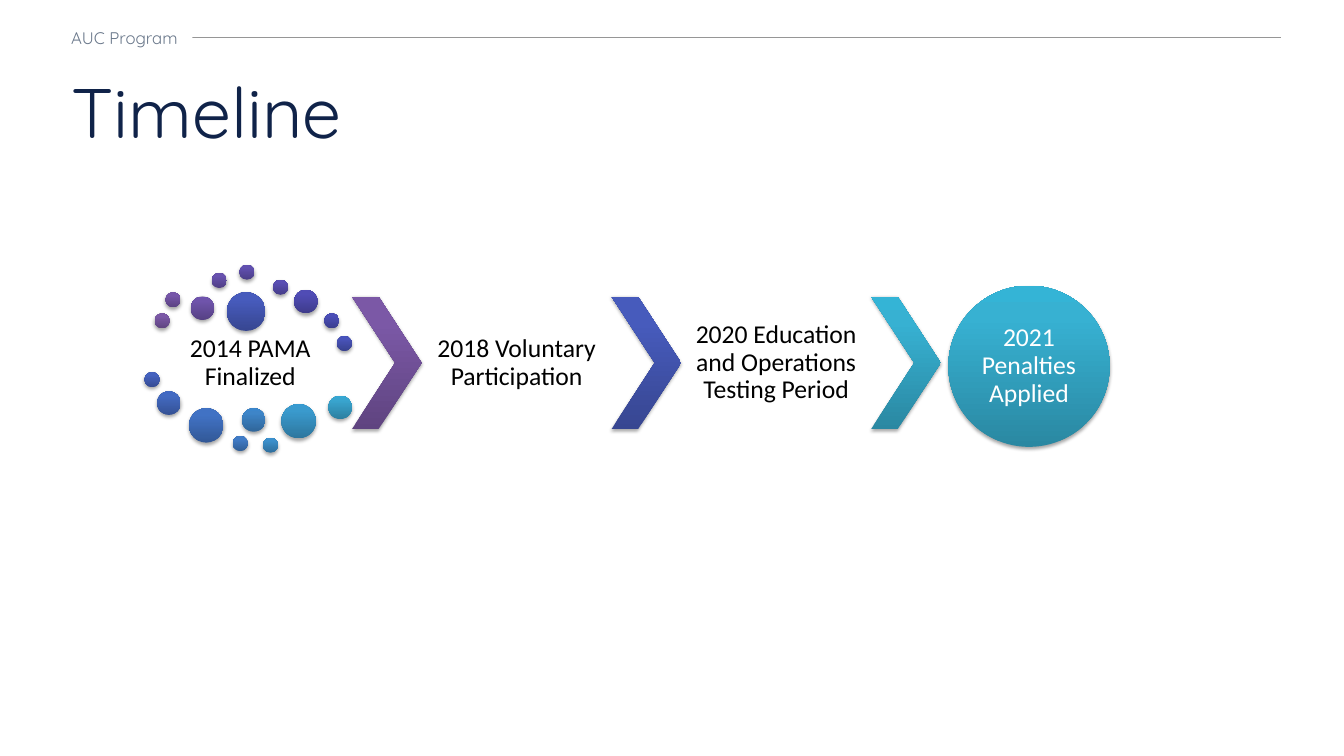
import copy

import pptx
import pptx.dml.color
import pptx.enum.shapes
import pptx.enum.text
import pptx.oxml
import pptx.oxml.ns
import pptx.util

Inches = pptx.util.Inches
Pt = pptx.util.Pt
Shapes = pptx.enum.shapes.MSO_SHAPE
Align = pptx.enum.text.PP_ALIGN
Anchor = pptx.enum.text.MSO_ANCHOR
NAMESPACE = 'xmlns:a="http://schemas.openxmlformats.org/drawingml/2006/main"'
SHADOW = (
    f'<a:outerShdw {NAMESPACE} blurRad="{Pt(3.1)}" dist="{Pt(1.8)}" dir="5400000" '
    'rotWithShape="0"><a:srgbClr val="000000"><a:alpha val="35000"/></a:srgbClr></a:outerShdw>'
)

PURPLE = ("5F4480", "7B58A6", "7C57A8")
BLUE = ("374691", "475BBC", "455ABF")
TEAL = ("2A88A2", "37B1D2", "34B4D6")
SMALL, MEDIUM, LARGE, LARGEST = 0.18, 0.28, 0.41, 0.46
DOTS = [
    (1.84, 3.73, SMALL, PURPLE),
    (1.97, 3.48, SMALL, ("5B4282", "7656A9", "7655AB")),
    (2.27, 3.53, MEDIUM, ("564184", "6F54AB", "6F53AE")),
    (2.52, 3.25, SMALL, ("503F86", "6852AE", "6851B0")),
    (2.85, 3.15, SMALL, ("4B3E88", "6150B0", "604FB3")),
    (3.25, 3.33, SMALL, ("453C89", "594EB3", "584DB5")),
    (3.5, 3.45, MEDIUM, ("3E3B8B", "504CB5", "4F4BB8")),
    (3.86, 3.73, SMALL, ("393C8D", "4B4EB7", "494CBA")),
    (4.01, 4, SMALL, ("38418F", "4954BA", "4753BD")),
    (2.7, 3.48, LARGEST, BLUE),
    (1.72, 4.43, SMALL, ("354B93", "4562BF", "4361C2")),
    (1.87, 4.66, MEDIUM, ("345195", "436AC1", "4169C4")),
    (2.25, 4.86, LARGE, ("325897", "4172C4", "3F72C7")),
    (2.77, 5.19, SMALL, ("315F98", "407BC6", "3D7CC9")),
    (2.88, 4.86, MEDIUM, ("30669A", "3E85C8", "3B86CC")),
    (3.13, 5.21, SMALL, ("2E6E9C", "3C8FCB", "3A90CE")),
    (3.35, 4.81, LARGE, ("2D769E", "3A9ACD", "389BD1")),
    (3.91, 4.71, MEDIUM, ("2C7FA0", "39A5CF", "36A7D3")),
]
CHEVRON_LEFT, CHEVRON_WIDTH, STEP_WIDTH = 4.19, 0.83, 2.26
STEP_TOP, STEP_HEIGHT = 3.53, 1.58
STEP_PITCH = CHEVRON_WIDTH + STEP_WIDTH


def color(value):
    return pptx.dml.color.RGBColor.from_string(value)


def apply(target, values):
    for name, value in values.items():
        setattr(target, name, value)


class TimelineSlide:
    heading_font = "Quicksand"
    body_font = "Calibri"

    def __init__(self, presentation):
        self.slide = presentation.slides.add_slide(presentation.slide_layouts[5])

    def set_text(self, shape, text, size, font, fill, align=Align.LEFT, inset=None, wrap=True, spacing=1.0):
        frame = shape.text_frame
        frame.text = text
        apply(frame, {"word_wrap": wrap, "vertical_anchor": Anchor.MIDDLE})
        if inset is not None:
            margin = Inches(inset)
            apply(frame, {"margin_left": margin, "margin_top": margin,
                          "margin_right": margin, "margin_bottom": margin})
        paragraph = frame.paragraphs[0]
        apply(paragraph, {"alignment": align, "line_spacing": spacing})
        apply(paragraph.font, {"size": Pt(size), "name": font})
        paragraph.font.color.rgb = color(fill)

    def title(self, text, left, top, width, height):
        shape = self.slide.shapes.title
        apply(shape, {"left": Inches(left), "top": Inches(top),
                      "width": Inches(width), "height": Inches(height)})
        self.set_text(shape, text, 60, self.heading_font, "102349")

    def rule(self, left, right, top):
        connector = self.slide.shapes.add_connector(
            pptx.enum.shapes.MSO_CONNECTOR.STRAIGHT,
            Inches(left), Inches(top), Inches(right), Inches(top))
        connector.line.width = Pt(1)
        connector.line.color.rgb = color("969696")
        properties = connector._element.spPr
        properties.append(pptx.oxml.parse_xml(f"<a:effectLst {NAMESPACE}/>"))

    def shape(self, preset, left, top, width, height):
        shape = self.slide.shapes.add_shape(
            preset, Inches(left), Inches(top), Inches(width), Inches(height))
        shape.line.fill.background()
        shape.shadow.inherit = False
        return shape

    def section(self, text, left, top, width, height):
        shape = self.shape(Shapes.RECTANGLE, left, top, width, height)
        shape.fill.solid()
        shape.fill.fore_color.rgb = color("FFFFFF")
        self.set_text(shape, text, 14.4, self.heading_font, "69778A", wrap=False)

    def shaded(self, preset, left, top, width, height, shades):
        shape = self.shape(preset, left, top, width, height)
        shape.fill.gradient()
        shape.fill.gradient_angle = 90
        properties = shape._element.spPr
        stops = properties.find(".//" + pptx.oxml.ns.qn("a:gsLst"))
        stops.append(copy.deepcopy(stops[0]))
        for stop, position, shade in zip(shape.fill.gradient_stops, (0, 0.8, 1), shades):
            stop.position = position
            stop.color.rgb = color(shade)
        effects = properties.find(pptx.oxml.ns.qn("a:effectLst"))
        effects.append(pptx.oxml.parse_xml(SHADOW))
        return shape

    def label(self, text, left, top, width, height, fill="000000", inset=0.03):
        box = self.slide.shapes.add_textbox(
            Inches(left), Inches(top), Inches(width), Inches(height))
        self.set_text(box, text, 22, self.body_font, fill, Align.CENTER, inset, spacing=0.9)


def main():
    presentation = pptx.Presentation()
    apply(presentation, {"slide_width": Inches(16), "slide_height": Inches(9)})
    timeline = TimelineSlide(presentation)
    timeline.rule(1.05, 15.25, 0.45)
    timeline.title("Timeline", 0.75, 0.83, 14.46, 0.97)
    timeline.section("AUC Program", 0.75, 0.28, 1.54, 0.34)

    timeline.label("2014 PAMA Finalized", 1.85, 3.95, STEP_WIDTH, 0.74)
    for left, top, size, shades in DOTS:
        timeline.shaded(Shapes.OVAL, left, top, size, size, shades)

    steps = ["2018 Voluntary Participation", "2020 Education and Operations Testing Period", None]
    for index, (text, shades) in enumerate(zip(steps, (PURPLE, BLUE, TEAL))):
        left = CHEVRON_LEFT + index * STEP_PITCH
        chevron = timeline.shaded(Shapes.CHEVRON, left, STEP_TOP, CHEVRON_WIDTH, STEP_HEIGHT, shades)
        chevron.adjustments[0] = 0.62
        if text:
            timeline.label(text, left + CHEVRON_WIDTH, STEP_TOP, STEP_WIDTH, STEP_HEIGHT)

    timeline.shaded(Shapes.OVAL, 11.29, 3.4, 1.92, 1.92, TEAL)
    timeline.label("2021 Penalties Applied", 11.57, 3.68, 1.36, 1.36, "FFFFFF", 0)
    presentation.save("out.pptx")


if __name__ == "__main__":
    main()
